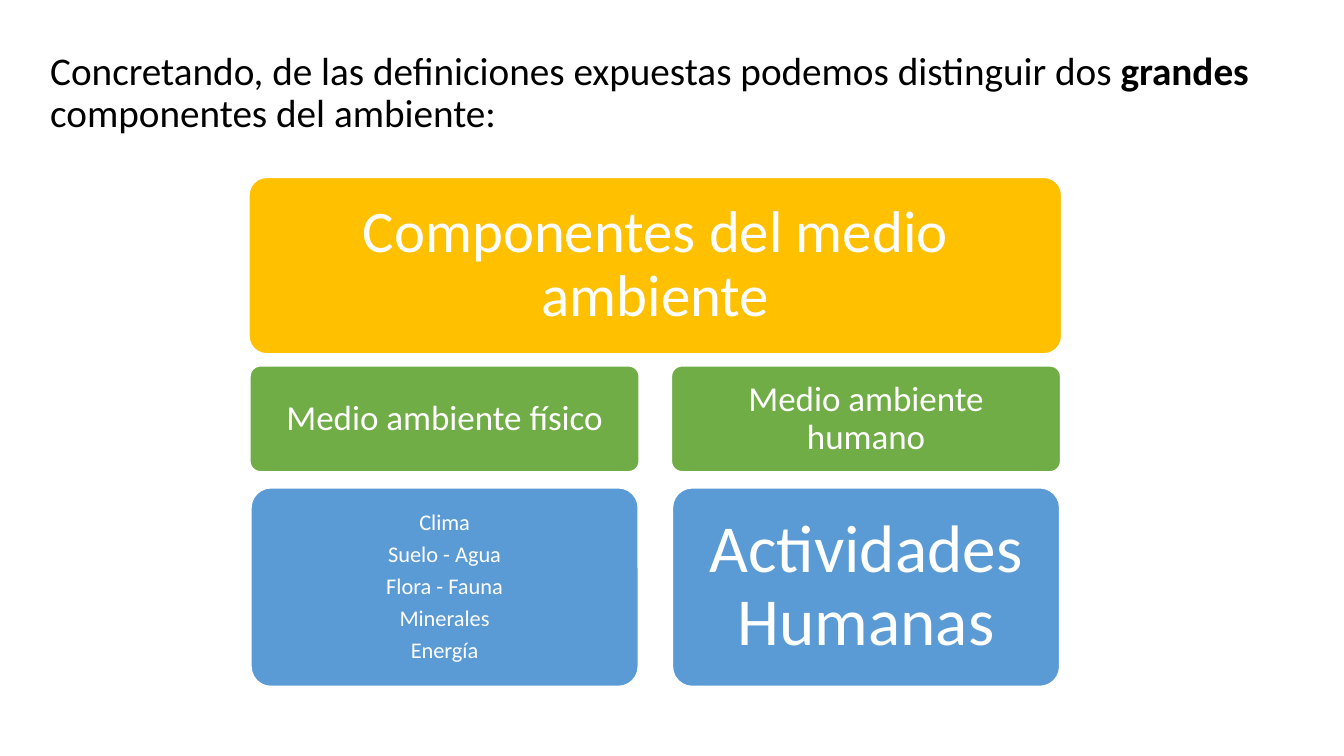
from pptx import Presentation
from pptx.dml.color import RGBColor
from pptx.enum import shapes, text
from pptx.util import Inches, Pt

BLACK = RGBColor(0x00, 0x00, 0x00)
WHITE = RGBColor(0xFF, 0xFF, 0xFF)
GOLD = RGBColor(0xFF, 0xC0, 0x00)
GREEN = RGBColor(0x70, 0xAD, 0x47)
BLUE = RGBColor(0x5B, 0x9B, 0xD5)

# Each branch: left edge, heading, size of its items, text margin, items
BRANCHES = [
    (2.48, "Medio ambiente físico", 16, 0.13,
     ["Clima", "Suelo - Agua", "Flora - Fauna", "Minerales", "Energía"]),
    (6.66, "Medio ambiente humano", 48, 0.25, ["Actividades Humanas"]),
]


def write_text(frame, paragraphs, *, size, color, align=text.PP_ALIGN.LEFT,
               anchor=text.MSO_ANCHOR.TOP, before=0, gap=0):
    """Fill a frame; each paragraph is a list of (words, bold) runs."""
    frame.word_wrap = True
    frame.vertical_anchor = anchor
    for index, runs in enumerate(paragraphs):
        paragraph = frame.add_paragraph() if index else frame.paragraphs[0]
        paragraph.alignment = align
        paragraph.line_spacing = 0.9
        paragraph.space_before = Pt(before)
        is_last = index == len(paragraphs) - 1
        paragraph.space_after = Pt(0 if is_last else gap)
        for words, bold in runs:
            run = paragraph.add_run()
            run.text = words
            run.font.name = "Calibri"
            run.font.size = Pt(size)
            run.font.bold = bold
            run.font.color.rgb = color


def add_intro(slide):
    intro = slide.shapes.add_textbox(
        Inches(0.4), Inches(0.46), Inches(12.4), Inches(6.63))
    write_text(intro.text_frame, [[
        ("Concretando, de las definiciones expuestas podemos distinguir dos ", False),
        ("grandes ", True),
        ("componentes del ambiente:", False),
    ]], size=28, color=BLACK, before=10)


def add_block(slide, left, top, width, height, fill, lines, size, margin):
    block = slide.shapes.add_shape(
        shapes.MSO_SHAPE.ROUNDED_RECTANGLE,
        Inches(left), Inches(top), Inches(width), Inches(height))
    block.adjustments[0] = 0.1
    block.shadow.inherit = False
    block.fill.solid()
    block.fill.fore_color.rgb = fill
    block.line.color.rgb = WHITE
    block.line.width = Pt(1)
    frame = block.text_frame
    frame.margin_left = frame.margin_right = Inches(margin)
    frame.margin_top = frame.margin_bottom = Inches(margin)
    write_text(frame, [[(line, False)] for line in lines], size=size,
               color=WHITE, align=text.PP_ALIGN.CENTER,
               anchor=text.MSO_ANCHOR.MIDDLE, gap=0.35 * size)


def main():
    deck = Presentation()
    deck.slide_width = Inches(13.33)
    deck.slide_height = Inches(7.5)
    slide = deck.slides.add_slide(deck.slide_layouts[6])

    add_intro(slide)

    # Root of the hierarchy
    add_block(slide, 2.47, 1.76, 8.06, 1.75, GOLD,
              ["Componentes del medio ambiente"], 42, 0.22)

    # Two branches: heading above its items
    for left, heading, item_size, item_margin, items in BRANCHES:
        add_block(slide, left, 3.63, 3.86, 1.05, GREEN, [heading], 25, 0.12)
        add_block(slide, left + 0.01, 4.84, 3.84, 1.97, BLUE,
                  items, item_size, item_margin)

    deck.save("out.pptx")


if __name__ == "__main__":
    main()
